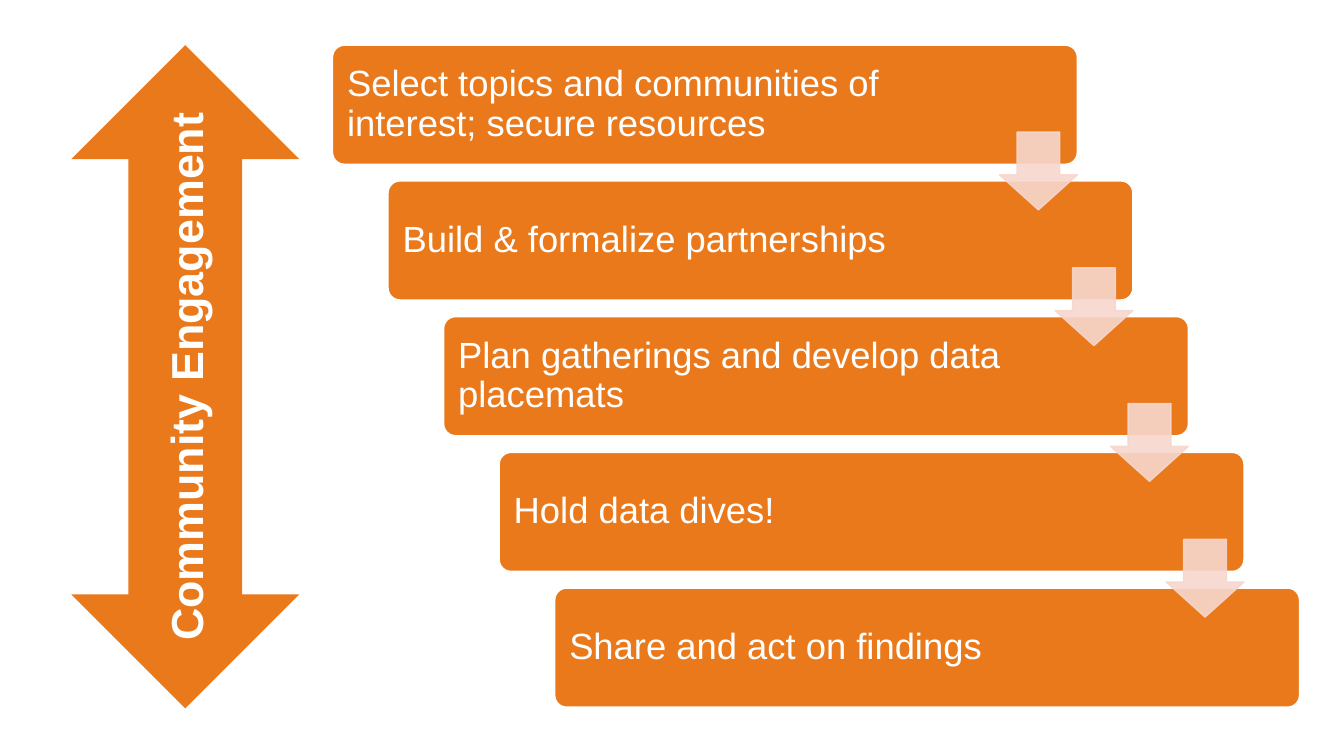
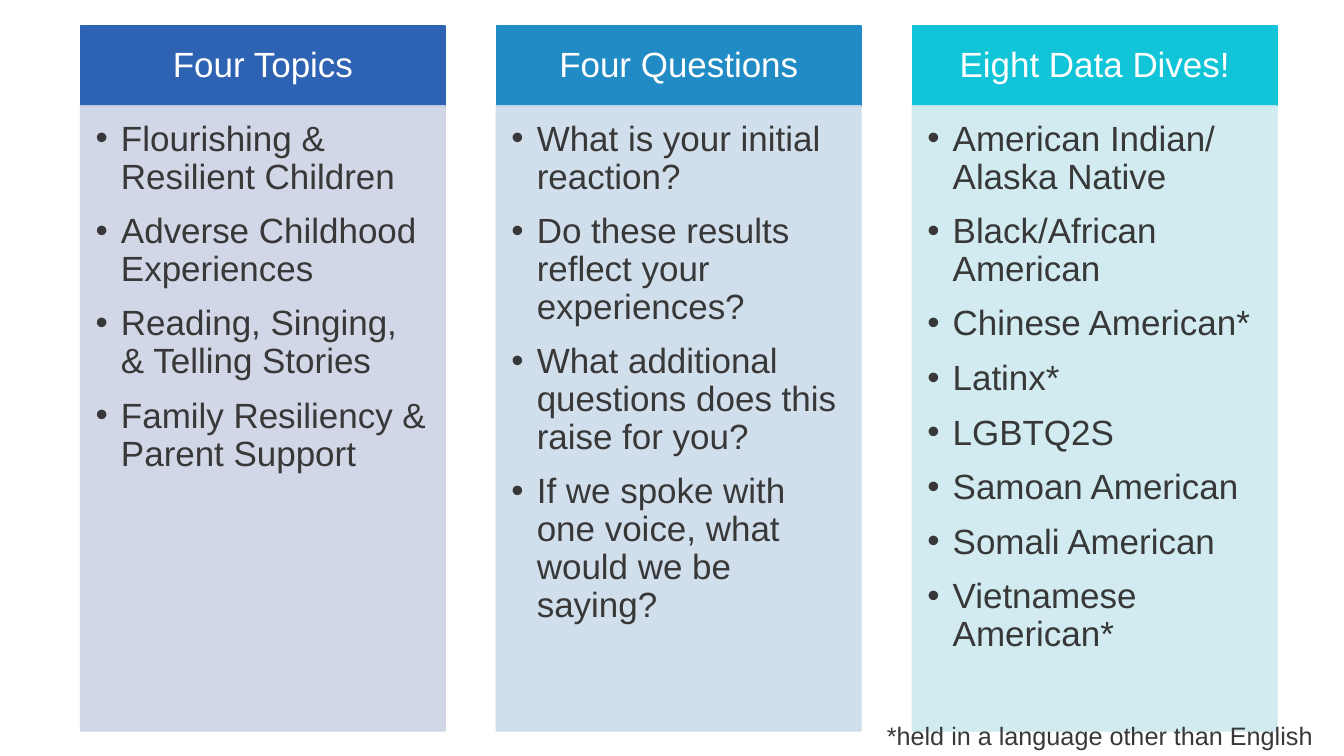
from lxml.etree import SubElement
from pptx import Presentation
from pptx.dml.color import RGBColor
from pptx.enum.shapes import MSO_SHAPE
from pptx.enum.text import MSO_ANCHOR, PP_ALIGN
from pptx.oxml.ns import qn
from pptx.util import Cm, Pt

# Shared style
FONT = "Arial"
WHITE = RGBColor(0xFF, 0xFF, 0xFF)
INK = RGBColor(0x38, 0x38, 0x38)
ORANGE = RGBColor(0xEA, 0x79, 0x1C)
PEACH = RGBColor(0xF7, 0xD7, 0xCD)
BLUE, PALE_BLUE = RGBColor(0x2E, 0x63, 0xB3), RGBColor(0xCD, 0xD3, 0xE5)
AZURE, PALE_AZURE = RGBColor(0x20, 0x8B, 0xC5), RGBColor(0xCC, 0xDC, 0xEB)
CYAN, PALE_CYAN = RGBColor(0x11, 0xC4, 0xD8), RGBColor(0xCC, 0xE9, 0xF0)

STEP_TEXT = dict(size=Pt(26), color=WHITE)
ENGAGEMENT_TEXT = dict(size=Pt(32), color=WHITE, bold=True)
HEADING_TEXT = dict(size=Pt(25), color=WHITE)
ITEM_TEXT = dict(size=Pt(25), color=INK)
NOTE_TEXT = dict(size=Pt(18), color=INK)

# Content
ENGAGEMENT = "Community Engagement"
STEPS = [
    "Select topics and communities of interest; secure resources",
    "Build & formalize partnerships",
    "Plan gatherings and develop data placemats",
    "Hold data dives!",
    "Share and act on findings",
]
COLUMNS = [
    ("Four Topics", BLUE, PALE_BLUE, [
        "Flourishing & Resilient Children",
        "Adverse Childhood Experiences",
        "Reading, Singing, & Telling Stories",
        "Family Resiliency & Parent Support",
    ]),
    ("Four Questions", AZURE, PALE_AZURE, [
        "What is your initial reaction?",
        "Do these results reflect your experiences?",
        "What additional questions does this raise for you?",
        "If we spoke with one voice, what would we be saying?",
    ]),
    ("Eight Data Dives!", CYAN, PALE_CYAN, [
        "American Indian/ Alaska Native",
        "Black/African American",
        "Chinese American*",
        "Latinx*",
        "LGBTQ2S",
        "Samoan American",
        "Somali American",
        "Vietnamese American*",
    ]),
]
NOTE = "*held in a language other than English"


def add_block(page, kind, place, fill, line=None, opacity=None, adjust=()):
    """Add a filled preset shape; place is left, top, width, height in cm."""
    block = page.shapes.add_shape(kind, *map(Cm, place))
    block.shadow.inherit = False
    block.fill.solid()
    block.fill.fore_color.rgb = fill
    if line is None:
        block.line.fill.background()
    else:
        block.line.color.rgb = line
        block.line.width = Pt(1)
    for index, value in enumerate(adjust):
        block.adjustments[index] = value
    if opacity:
        for color in block._element.spPr.iter(qn("a:srgbClr")):
            SubElement(color, qn("a:alpha"), val=str(opacity * 1000))
    return block


def write(shape, lines, style, anchor=MSO_ANCHOR.MIDDLE, align=PP_ALIGN.LEFT,
          margins=(0.25, 0.13, 0.25, 0.13), spacing=None, after=0, bullet=False):
    """Fill a shape with paragraphs; margins are left, top, right, bottom in cm."""
    frame = shape.text_frame
    frame.word_wrap = True
    frame.vertical_anchor = anchor
    for side, size in zip(("left", "top", "right", "bottom"), margins):
        setattr(frame, f"margin_{side}", Cm(size))
    for index, line in enumerate(lines):
        para = frame.paragraphs[0] if index == 0 else frame.add_paragraph()
        para.alignment = align
        para.line_spacing = spacing
        para.space_after = Pt(after)
        if bullet:
            props = para._p.get_or_add_pPr()
            props.set("marL", str(Cm(0.64)))
            props.set("indent", str(-Cm(0.64)))
            SubElement(props, qn("a:buFont"), typeface=FONT)
            SubElement(props, qn("a:buChar"), char="•")
        span = para.add_run()
        span.text = line
        span.font.name = FONT
        for name, value in style.items():
            if name == "color":
                span.font.color.rgb = value
            else:
                setattr(span.font, name, value)


def build_steps(page):
    left, top, width, height = 8.38, 1.14, 18.77, 3.0
    shift, pitch, arrow = 1.4, 3.42, 1.96

    # Staircase of steps
    for index, step in enumerate(STEPS):
        box = add_block(page, MSO_SHAPE.ROUNDED_RECTANGLE,
                        (left + index * shift, top + index * pitch, width, height),
                        ORANGE, WHITE, adjust=[0.1])
        write(box, [step], STEP_TEXT, margins=(0.28, 0.28, 3.5, 0.28), spacing=0.9)

    # Arrows from each step to the next
    for index in range(len(STEPS) - 1):
        add_block(page, MSO_SHAPE.DOWN_ARROW,
                  (left + width - arrow + index * shift, top + 2.19 + index * pitch,
                   arrow, arrow),
                  PEACH, PEACH, opacity=90, adjust=[0.55, 0.45])

    # Engagement arrow beside all steps
    engagement = add_block(page, MSO_SHAPE.UP_DOWN_ARROW, (1.8, top, 5.74, 16.71), ORANGE)
    write(engagement, [ENGAGEMENT], ENGAGEMENT_TEXT, align=PP_ALIGN.CENTER)
    engagement.text_frame._txBody.bodyPr.set("vert", "vert270")


def build_columns(page):
    left, top, width, pitch = 2.03, 0.66, 9.19, 10.48
    head_height, body_height = 2.01, 15.75

    # Heading and list of each column
    for index, (title, dark, pale, items) in enumerate(COLUMNS):
        x = left + index * pitch
        heading = add_block(page, MSO_SHAPE.RECTANGLE, (x, top, width, head_height), dark, dark)
        write(heading, [title], HEADING_TEXT, align=PP_ALIGN.CENTER,
              margins=(0.48, 0.28, 0.48, 0.28), spacing=0.9)
        body = add_block(page, MSO_SHAPE.RECTANGLE,
                         (x, top + head_height, width, body_height), pale, pale, opacity=90)
        write(body, items, ITEM_TEXT, anchor=MSO_ANCHOR.TOP,
              margins=(0.38, 0.38, 0.48, 0.56), spacing=0.9, after=12, bullet=True)

    # Footnote
    note = page.shapes.add_textbox(Cm(22.1), Cm(18.03), Cm(11.77), Cm(1.02))
    write(note, [NOTE], NOTE_TEXT, anchor=MSO_ANCHOR.TOP)


def main():
    deck = Presentation()
    deck.slide_width, deck.slide_height = Cm(33.87), Cm(19.05)
    for build in (build_steps, build_columns):
        build(deck.slides.add_slide(deck.slide_layouts[6]))
    deck.save("out.pptx")


if __name__ == "__main__":
    main()
